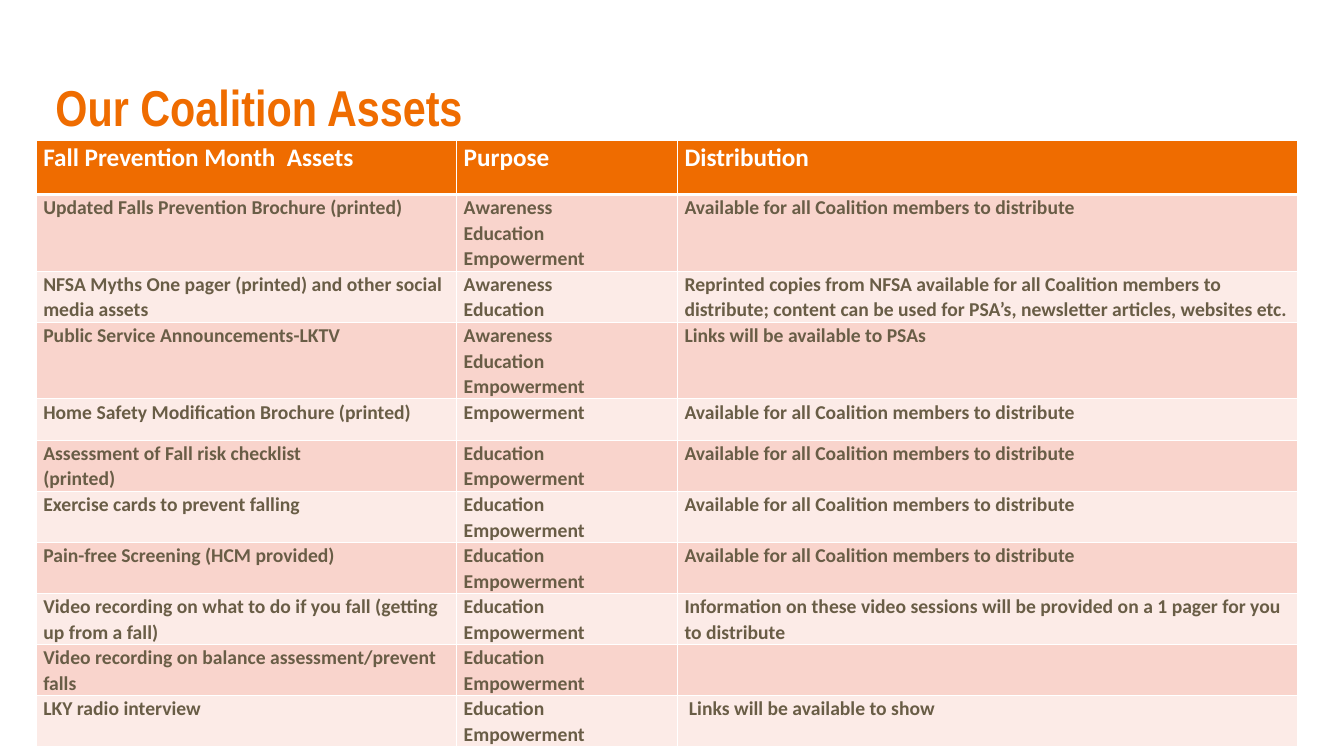
from lxml.etree import SubElement
from pptx import Presentation
from pptx.dml.color import RGBColor
from pptx.enum.text import MSO_ANCHOR, PP_ALIGN
from pptx.oxml.ns import qn
from pptx.util import Inches, Pt

TITLE = "Our Coalition Assets"
HEAD = ("Fall Prevention Month  Assets", "Purpose", "Distribution")
ALL = "Available for all Coalition members to distribute"
AWARE, EDU, POWER = "Awareness", "Education", "Empowerment"
ROWS = [
    ("Updated Falls Prevention Brochure (printed)", (AWARE, EDU, POWER), ALL),
    ("NFSA Myths One pager (printed) and other social media assets", (AWARE, EDU),
     "Reprinted copies from NFSA available for all Coalition members to distribute; "
     "content can be used for PSA’s, newsletter articles, websites etc."),
    ("Public Service Announcements-LKTV", (AWARE, EDU, POWER),
     "Links will be available to PSAs"),
    ("Home Safety Modification Brochure (printed)", (POWER,), ALL),
    (("Assessment of Fall risk checklist", "(printed)"), (EDU, POWER), ALL),
    ("Exercise cards to prevent falling", (EDU, POWER), ALL),
    ("Pain-free Screening (HCM provided)", (EDU, POWER), ALL),
    ("Video recording on what to do if you fall (getting up from a fall)", (EDU, POWER),
     "Information on these video sessions will be provided on a 1 pager for you to distribute"),
    ("Video recording on balance assessment/prevent falls", (EDU, POWER), ""),
    ("LKY radio interview", (EDU, POWER), " Links will be available to show"),
]
WIDTHS = (4.17, 2.19, 6.15)
HEAD_H, ROW_H = 0.54, 0.41
COLORS = {"orange": "EF6C00", "white": "FFFFFF", "brown": "695D46",
          "dark": "F9D4CC", "light": "FCEBE7"}


def color(name):
    return RGBColor.from_string(COLORS[name])


def write(para, text, font, size, tint):
    run = para.add_run()
    run.text = text
    run.font.name, run.font.size, run.font.bold = font, Pt(size), True
    run.font.color.rgb = color(tint)


def border(cell, low):
    props = cell._tc.get_or_add_tcPr()
    for side, width in (("L", 1), ("R", 1), ("T", 1), ("B", low)):
        line = SubElement(props, qn(f"a:ln{side}"), w=str(Pt(width)))
        fill = SubElement(line, qn("a:solidFill"))
        SubElement(fill, qn("a:srgbClr"), val=COLORS["white"])


def fill_cell(cell, lines, size, tint, back, low=1):
    border(cell, low)
    cell.fill.solid()
    cell.fill.fore_color.rgb = color(back)
    cell.margin_left = cell.margin_right = Inches(0.07)
    cell.margin_top = cell.margin_bottom = 0
    lines = (lines,) if isinstance(lines, str) else lines
    for i, text in enumerate(lines):
        frame = cell.text_frame
        para = frame.add_paragraph() if i else frame.paragraphs[0]
        para.line_spacing = 1.07
        if text:
            write(para, text, "Calibri", size, tint)


def add_title(slide):
    title = slide.shapes.title
    title.left, title.top = Inches(0.45), Inches(0.65)
    title.width, title.height = Inches(12.42), Inches(1.03)
    frame = title.text_frame
    frame.word_wrap = True
    frame.vertical_anchor = MSO_ANCHOR.TOP
    frame.margin_left = frame.margin_right = Inches(0.1)
    frame.margin_top = frame.margin_bottom = Inches(0.1)
    para = frame.paragraphs[0]
    para.alignment = PP_ALIGN.LEFT
    write(para, TITLE, "Arial Narrow", 36, "orange")


def add_grid(slide):
    height = HEAD_H + ROW_H * len(ROWS)
    table = slide.shapes.add_table(
        len(ROWS) + 1, len(HEAD), Inches(0.36), Inches(1.39),
        Inches(sum(WIDTHS)), Inches(height)).table
    for col, width in zip(table.columns, WIDTHS):
        col.width = Inches(width)
    for r, texts in enumerate([HEAD, *ROWS]):
        table.rows[r].height = Inches(ROW_H if r else HEAD_H)
        for c, text in enumerate(texts):
            cell = table.cell(r, c)
            if r:
                fill_cell(cell, text, 14, "brown", "dark" if r % 2 else "light")
            else:
                fill_cell(cell, text, 18, "white", "orange", 3)


def main():
    """Build the coalition assets slide."""
    deck = Presentation()
    deck.slide_width, deck.slide_height = Inches(13.33), Inches(7.5)
    slide = deck.slides.add_slide(deck.slide_layouts[5])
    add_title(slide)
    add_grid(slide)
    deck.save("out.pptx")


if __name__ == "__main__":
    main()
